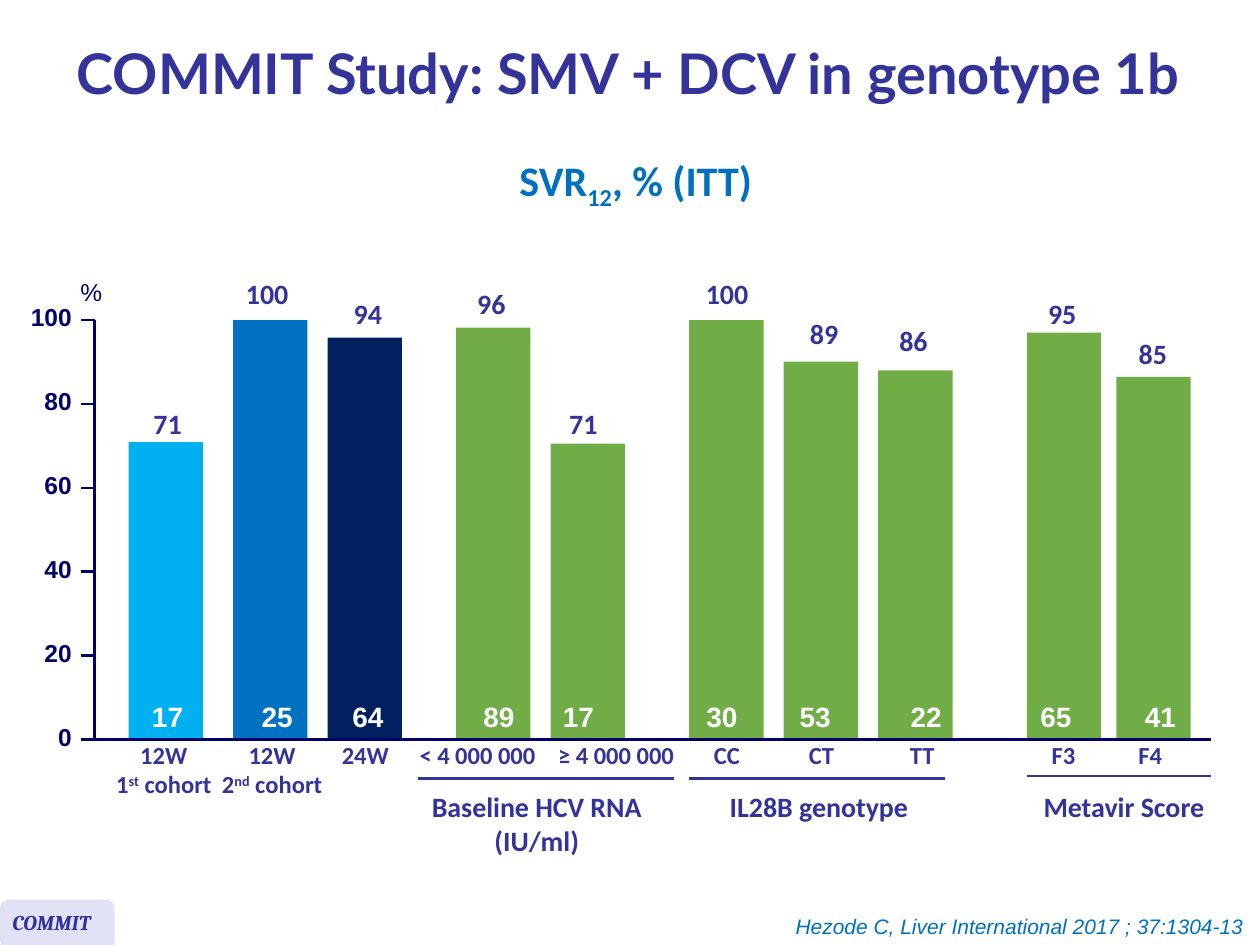
"""Build the COMMIT study slide with its SVR12 bar diagram by subgroup."""
from typing import NamedTuple

from lxml import etree
from pptx import Presentation
from pptx.dml.color import RGBColor
from pptx.enum.shapes import MSO_CONNECTOR, MSO_SHAPE
from pptx.enum.text import MSO_ANCHOR, MSO_AUTO_SIZE, PP_ALIGN
from pptx.oxml.ns import qn
from pptx.util import Inches, Pt

LEFT, CENTER, RIGHT = PP_ALIGN.LEFT, PP_ALIGN.CENTER, PP_ALIGN.RIGHT
TOP, MIDDLE = MSO_ANCHOR.TOP, MSO_ANCHOR.MIDDLE
RECTANGLE, ROUNDED = MSO_SHAPE.RECTANGLE, MSO_SHAPE.ROUNDED_RECTANGLE
STRAIGHT = MSO_CONNECTOR.STRAIGHT
FIT_SHAPE, FIT_NONE = MSO_AUTO_SIZE.SHAPE_TO_FIT_TEXT, MSO_AUTO_SIZE.NONE

INDIGO = RGBColor(0x33, 0x33, 0x99)
AXIS_NAVY = RGBColor(0x00, 0x00, 0x66)
SKY = RGBColor(0x00, 0xB0, 0xF0)
BLUE = RGBColor(0x00, 0x70, 0xC0)
NAVY = RGBColor(0x00, 0x20, 0x60)
GREEN = RGBColor(0x70, 0xAD, 0x47)
LAVENDER = RGBColor(0xE2, 0xE2, 0xF6)
WHITE = RGBColor(0xFF, 0xFF, 0xFF)

AXIS_X, AXIS_END, TICK_X = 0.75, 9.61, 0.64
BASE_Y, FULL_Y = 5.87, 2.54
BAR_WIDTH = 0.59
TIGHT_LINE = Pt(15.2)


class Bar(NamedTuple):
    """A bar and the centres of its value, patient count and category."""

    left: float
    top: float
    color: RGBColor
    value: str
    value_x: float
    value_top: float
    count: str
    count_x: float
    label: str
    label_x: float
    label_width: float = 0.3


class Group(NamedTuple):
    """A rule under several categories, with its caption."""

    left: float
    right: float
    rule_y: float
    caption: str
    caption_x: float
    caption_width: float


BARS = [
    Bar(1.02, 3.51, SKY, "71", 1.33, 3.28, "17", 1.33, "12W\n1|st| cohort", 1.3, 0.82),
    Bar(1.85, 2.54, BLUE, "100", 2.12, 2.25, "25", 2.2, "12W\n2|nd| cohort", 2.16, 0.86),
    Bar(2.6, 2.68, NAVY, "94", 2.92, 2.41, "64", 2.92, "24W", 2.9, 0.44),
    Bar(3.62, 2.6, GREEN, "96", 3.9, 2.33, "89", 3.96, "< 4 000 000", 3.79, 0.98),
    Bar(4.37, 3.52, GREEN, "71", 4.63, 3.28, "17", 4.59, "≥ 4 000 000", 4.89, 0.98),
    Bar(5.47, 2.54, GREEN, "100", 5.77, 2.25, "30", 5.73, "CC", 5.77),
    Bar(6.22, 2.87, GREEN, "89", 6.54, 2.57, "53", 6.47, "CT", 6.52),
    Bar(6.97, 2.94, GREEN, "86", 7.25, 2.62, "22", 7.35, "TT", 7.32),
    Bar(8.15, 2.64, GREEN, "95", 8.43, 2.41, "65", 8.38, "F3", 8.44),
    Bar(8.86, 2.99, GREEN, "85", 9.15, 2.73, "41", 9.21, "F4", 9.13),
]
GROUPS = [
    Group(3.32, 5.35, 6.18, "Baseline HCV RNA\n(IU/ml)", 4.26, 1.74),
    Group(5.47, 7.5, 6.18, "IL28B genotype", 6.5, 1.5),
    Group(8.15, 9.61, 6.16, "Metavir Score", 8.92, 1.35),
]


def add_text(page, text: str, left: float, top: float, width: float, height: float, *,
             size: float, font: str = "Calibri", color: RGBColor = INDIGO,
             bold: bool = True, italic: bool = False, align=CENTER, anchor=TOP,
             spacing=None, padded: bool = False, wrap: bool = False,
             shift: int = 30, fit=FIT_SHAPE) -> None:
    """Add a text box; text between bars is raised or lowered by shift percent."""
    box = page.shapes.add_textbox(Inches(left), Inches(top), Inches(width), Inches(height))
    frame = box.text_frame
    frame.word_wrap = wrap
    frame.auto_size = fit
    frame.vertical_anchor = anchor
    if not padded:
        frame.margin_left = frame.margin_right = frame.margin_top = frame.margin_bottom = 0
    for index, line in enumerate(text.split("\n")):
        para = frame.add_paragraph() if index else frame.paragraphs[0]
        para.alignment = align
        if spacing is not None:
            para.line_spacing = spacing
        for position, words in enumerate(line.split("|")):
            span = para.add_run()
            span.text = words
            span.font.name, span.font.size = font, Pt(size)
            span.font.bold, span.font.italic = bold, italic
            span.font.color.rgb = color
            if position % 2:
                span.font._element.set("baseline", str(shift * 1000))


def add_centered(page, text: str, center: float, top: float, width: float,
                 height: float, **style) -> None:
    """Add a text box around a horizontal centre."""
    add_text(page, text, center - width / 2, top, width, height, **style)


def add_block(page, kind, left: float, top: float, width: float, height: float,
              color: RGBColor):
    """Add a filled shape without outline or shadow."""
    block = page.shapes.add_shape(kind, Inches(left), Inches(top), Inches(width), Inches(height))
    block.shadow.inherit = False
    block.fill.solid()
    block.fill.fore_color.rgb = color
    block.line.fill.background()
    return block


def add_line(page, x1: float, y1: float, x2: float, y2: float, color: RGBColor) -> None:
    """Add a straight line without shadow."""
    line = page.shapes.add_connector(STRAIGHT, Inches(x1), Inches(y1), Inches(x2), Inches(y2))
    line.line.color.rgb = color
    line.line.width = Pt(1.5)
    etree.SubElement(line._element.spPr, qn("a:effectLst"))


def add_axes(page) -> None:
    """Draw the percent axis with its ticks."""
    add_line(page, AXIS_X, FULL_Y, AXIS_X, BASE_Y, AXIS_NAVY)
    for percent in range(0, 101, 20):
        y = BASE_Y - (BASE_Y - FULL_Y) * percent / 100
        add_line(page, TICK_X, y, AXIS_X, y, AXIS_NAVY)
        width = 0.11 * len(str(percent))
        add_text(page, str(percent), 0.57 - width, y - 0.14, width, 0.24, size=14,
                 font="Arial", color=AXIS_NAVY, align=RIGHT)
    add_text(page, "%", 0.54, 2.15, 0.38, 0.34, size=14, font="Arial",
             color=AXIS_NAVY, bold=False, align=LEFT, padded=True)


def add_bar(page, bar: Bar) -> None:
    """Draw one bar with its value, patient count and category."""
    add_block(page, RECTANGLE, bar.left, bar.top, BAR_WIDTH, BASE_Y - bar.top, bar.color)
    add_centered(page, bar.value, bar.value_x, bar.value_top, 0.38, 0.21, size=16,
                 spacing=TIGHT_LINE)
    add_centered(page, bar.count, bar.count_x, 5.55, 0.3, 0.27, size=16,
                 font="Arial", color=WHITE)
    add_centered(page, bar.label, bar.label_x, BASE_Y, bar.label_width,
                 0.24 * len(bar.label.split("\n")), size=14)


def add_group(page, group: Group) -> None:
    """Draw the rule and caption of a group of bars."""
    add_line(page, group.left, group.rule_y, group.right, group.rule_y, INDIGO)
    add_centered(page, group.caption, group.caption_x, 6.27, group.caption_width,
                 0.27 * len(group.caption.split("\n")), size=16)


def main() -> None:
    """Build and save the slide."""
    deck = Presentation()
    deck.slide_width, deck.slide_height = Inches(10), Inches(7.5)
    page = deck.slides.add_slide(deck.slide_layouts[6])
    add_text(page, "SVR|12|, % (ITT)", 4, 1.42, 2.09, 0.35, size=24, color=BLUE,
             spacing=TIGHT_LINE, padded=True, shift=-25)
    add_text(page, "COMMIT Study: SMV + DCV in genotype 1b", 0.51, 0.08, 9.13, 1.07,
             size=32, font="Lato", align=LEFT, anchor=MIDDLE, spacing=0.85,
             padded=True, wrap=True, fit=FIT_NONE)
    badge = add_block(page, ROUNDED, 0, 7.14, 0.91, 0.39, LAVENDER)
    badge.adjustments[0] = 0.17
    add_text(page, "COMMIT", 0, 7.17, 0.98, 0.3, size=12, font="Cambria", italic=True,
             align=LEFT, padded=True, wrap=True)
    add_text(page, "Hezode C, Liver International 2017 ; 37:1304-13", 6.19, 7.2, 3.78, 0.3,
             size=12, font="Arial", color=BLUE, bold=False, italic=True, align=RIGHT,
             padded=True)
    add_axes(page)
    for bar in BARS:
        add_bar(page, bar)
    add_line(page, AXIS_X, BASE_Y, AXIS_END, BASE_Y, AXIS_NAVY)
    for group in GROUPS:
        add_group(page, group)
    deck.save("out.pptx")


if __name__ == "__main__":
    main()
